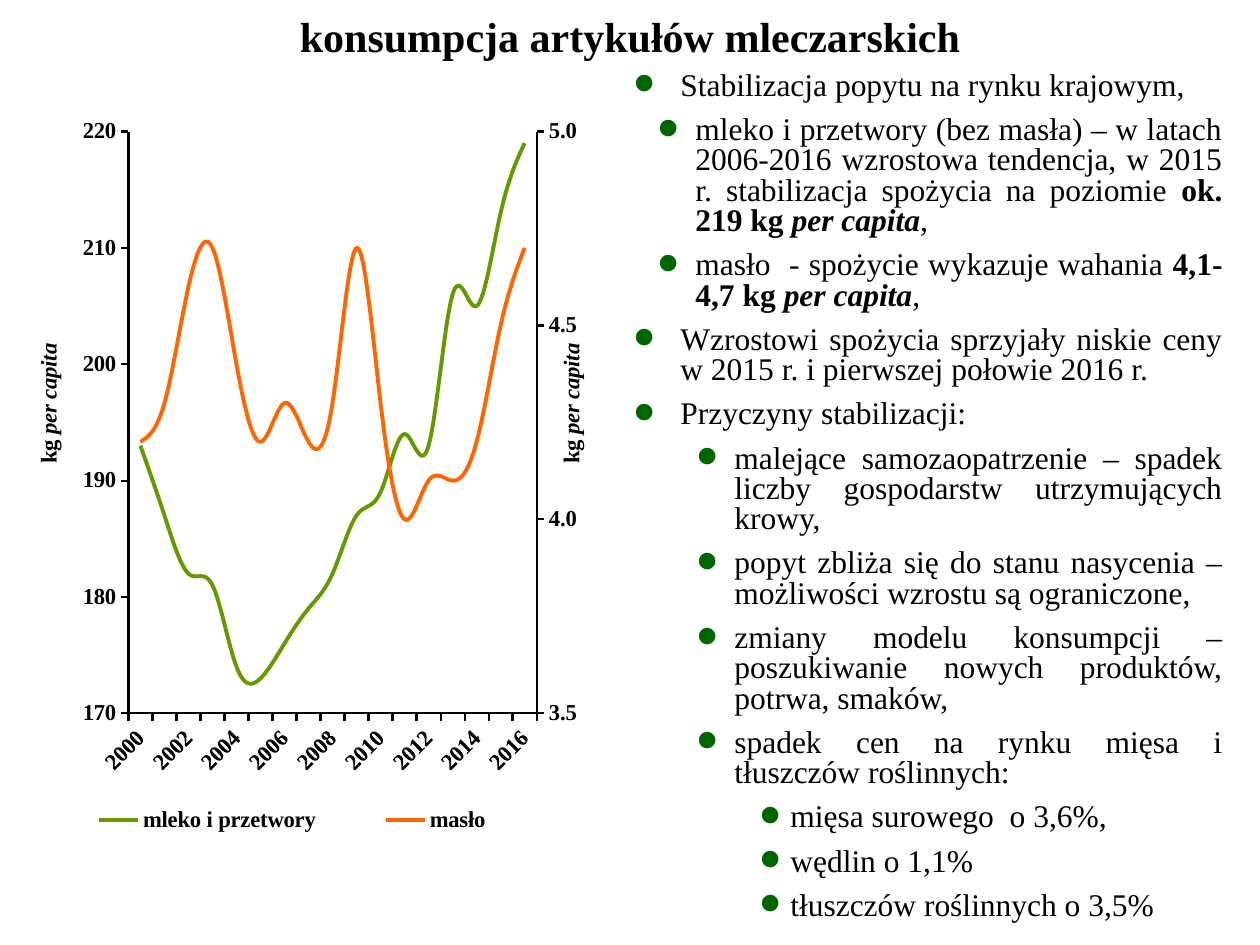
from copy import deepcopy
from dataclasses import dataclass

from lxml import etree
from pptx import Presentation
from pptx.chart.axis import ValueAxis
from pptx.chart.data import CategoryChartData
from pptx.dml.color import RGBColor
from pptx.enum.chart import XL_CHART_TYPE, XL_LEGEND_POSITION, XL_TICK_MARK
from pptx.enum.text import MSO_ANCHOR, PP_ALIGN
from pptx.oxml.ns import qn
from pptx.util import Emu, Pt

PX = 914400 // 126
LINE = XL_CHART_TYPE.LINE
BOTTOM = XL_LEGEND_POSITION.BOTTOM
OUTSIDE, NO_TICK = XL_TICK_MARK.OUTSIDE, XL_TICK_MARK.NONE
MIDDLE = MSO_ANCHOR.MIDDLE
CENTER, JUSTIFY = PP_ALIGN.CENTER, PP_ALIGN.JUSTIFY


@dataclass
class Theme:
    font: str = "Times New Roman"
    text: RGBColor = RGBColor(0, 0, 0)
    bullet: str = "006600"
    milk: RGBColor = RGBColor(0x66, 0x99, 0x00)
    butter: RGBColor = RGBColor(0xFF, 0x66, 0x00)
    title_size: int = 24
    body_size: int = 18
    chart_size: int = 13


# Level, left margin and hanging indent in px
POINT, SUBPOINT = (0, 48, 48), (1, 63, 39)
CAUSE, PRICE = (1, 102, 39), (2, 158, 32)

BODY = [
    (POINT, [("Stabilizacja popytu na rynku krajowym,", "")]),
    (SUBPOINT, [("mleko i przetwory (bez masła) – w latach 2006-2016 wzrostowa "
                 "tendencja, w 2015 r. stabilizacja spożycia na poziomie ", ""),
                ("ok. 219 kg ", "b"), ("per capita", "bi"), (", ", "")]),
    (SUBPOINT, [("masło  - spożycie wykazuje wahania ", ""),
                ("4,1-4,7 kg ", "b"), ("per capita", "bi"), (", ", "")]),
    (POINT, [("Wzrostowi spożycia sprzyjały niskie ceny w 2015 r. "
              "i pierwszej połowie 2016 r. ", "")]),
    (POINT, [("Przyczyny stabilizacji:", "")]),
    (CAUSE, [("malejące samozaopatrzenie – spadek liczby gospodarstw "
              "utrzymujących krowy,", "")]),
    (CAUSE, [("popyt zbliża się do stanu nasycenia – możliwości wzrostu "
              "są ograniczone,", "")]),
    (CAUSE, [("zmiany modelu konsumpcji – poszukiwanie nowych produktów, "
              "potrwa, smaków,", "")]),
    (CAUSE, [("spadek cen na rynku mięsa i tłuszczów roślinnych:", "")]),
    (PRICE, [("mięsa surowego  o 3,6%,", "")]),
    (PRICE, [("wędlin o 1,1%", "")]),
    (PRICE, [("tłuszczów roślinnych o 3,5%", "")]),
]

YEARS = [str(year) for year in range(2000, 2017)]
MILK = [193, 187, 182, 181, 174, 173, 176, 179, 182, 187, 189, 194, 193, 206, 205, 213, 219]
BUTTER = [4.2, 4.3, 4.6, 4.7, 4.4, 4.2, 4.3, 4.2, 4.3, 4.7, 4.3, 4, 4.1, 4.1, 4.2, 4.5, 4.7]


def child(parent, tag, index=None, **attrs):
    """Add a child element, at the end unless an index is given."""
    el = etree.Element(qn(tag), attrs)
    parent.insert(len(parent) if index is None else index, el)
    return el


def set_layout(parent, index, inner=False, **fractions):
    """Place a chart part by fractions of the chart area."""
    for old in parent.findall(qn("c:layout")):
        parent.remove(old)
    manual = child(child(parent, "c:layout", index), "c:manualLayout")
    if inner:
        child(manual, "c:layoutTarget", val="inner")
    for name in ("xMode", "yMode"):
        child(manual, f"c:{name}", val="edge")
    for name, value in fractions.items():
        child(manual, f"c:{name}", val=str(value))


class SlideBuilder:
    def __init__(self, s, theme):
        self.s, self.theme = s, theme

    def style(self, font, size, bold=False, italic=False):
        font.name, font.size = self.theme.font, Pt(size)
        font.bold, font.italic = bold, italic
        font.color.rgb = self.theme.text

    def runs(self, p, parts, size):
        for text, marks in parts:
            r = p.add_run()
            r.text = text
            self.style(r.font, size, "b" in marks, "i" in marks)

    def box(self, *px):
        tf = self.s.shapes.add_textbox(*(Emu(v * PX) for v in px)).text_frame
        tf.word_wrap = True
        return tf

    def title(self, text, *px):
        tf = self.box(*px)
        tf.vertical_anchor = MIDDLE
        p = tf.paragraphs[0]
        p.alignment = CENTER
        self.runs(p, [(text, "b")], self.theme.title_size)

    def bullets(self, items, *px):
        tf = self.box(*px)
        for i, ((level, margin, hang), parts) in enumerate(items):
            p = tf.add_paragraph() if i else tf.paragraphs[0]
            p.alignment, p.level = JUSTIFY, level
            p.line_spacing, p.space_after = 0.8, Pt(6)
            if i:
                p.space_before = Pt(2)
            pPr = p._p.get_or_add_pPr()
            pPr.set("marL", str(margin * PX))
            pPr.set("indent", str(-hang * PX))
            child(child(pPr, "a:buClr"), "a:srgbClr", val=self.theme.bullet)
            child(pPr, "a:buSzPct", val="220000")
            child(pPr, "a:buFont", typeface=self.theme.font)
            child(pPr, "a:buChar", char="•")
            self.runs(p, parts, self.theme.body_size)

    def axis_line(self, axis):
        axis.format.line.color.rgb = self.theme.text
        axis.format.line.width = Pt(1.25)
        axis.major_tick_mark, axis.minor_tick_mark = OUTSIDE, NO_TICK

    def value_axis(self, axis, low, high, step, number_format, title_x):
        self.axis_line(axis)
        axis.has_major_gridlines = False
        axis.minimum_scale, axis.maximum_scale, axis.major_unit = low, high, step
        axis.tick_labels.number_format = number_format
        axis.tick_labels.number_format_is_linked = False
        self.style(axis.tick_labels.font, self.theme.chart_size, True)
        p = axis.axis_title.text_frame.paragraphs[0]
        self.runs(p, [("kg ", "b"), ("per capita", "bi")], self.theme.chart_size)
        title = axis.axis_title._element
        title.find(".//" + qn("a:bodyPr")).set("rot", "-5400000")
        set_layout(title, 1, x=title_x, y=0.3)

    def second_axis(self, chart):
        """Move the last series to its own right-hand axis."""
        plot = chart._chartSpace.chart.plotArea
        left = plot.find(qn("c:lineChart"))
        right = deepcopy(left)
        left.remove(left.findall(qn("c:ser"))[1])
        right.remove(right.find(qn("c:ser")))
        left.addnext(right)
        cat, val = (deepcopy(plot.find(qn(t))) for t in ("c:catAx", "c:valAx"))
        ids = {cat.find(qn("c:axId")).get("val"): "5001",
               val.find(qn("c:axId")).get("val"): "5002"}
        for part in (right, cat, val):
            for tag in ("c:axId", "c:crossAx"):
                for el in part.findall(qn(tag)):
                    el.set("val", ids[el.get("val")])
        cat.find(qn("c:delete")).set("val", "1")
        val.find(qn("c:axPos")).set("val", "r")
        val.find(qn("c:crosses")).set("val", "max")
        plot.find(qn("c:valAx")).addnext(val)
        val.addnext(cat)
        return ValueAxis(val)

    def consumption_chart(self, *px):
        data = CategoryChartData()
        data.categories = YEARS
        data.add_series("mleko i przetwory", MILK)
        data.add_series("masło", BUTTER)
        chart = self.s.shapes.add_chart(LINE, *(Emu(v * PX) for v in px), data).chart
        chart.has_title = False
        self.style(chart.font, self.theme.chart_size, True)
        # chart.value_axis means the last axis once there are two
        left_axis = chart.value_axis
        right_axis = self.second_axis(chart)
        set_layout(chart._chartSpace.chart.plotArea, 0, True, x=0.184, y=0.021, w=0.726, h=0.781)
        # Lines
        for plot, color in zip(chart.plots, (self.theme.milk, self.theme.butter)):
            plot.vary_by_categories = False
            series = plot.series[0]
            series.smooth = True
            series.format.line.color.rgb = color
            series.format.line.width = Pt(2.25)
        # Axes
        axis = chart.category_axis
        self.axis_line(axis)
        self.style(axis.tick_labels.font, self.theme.chart_size, True)
        cat = axis._element
        cat.find(qn("c:txPr")).find(qn("a:bodyPr")).set("rot", "-2700000")
        skip = etree.Element(qn("c:tickLblSkip"), val="2")
        cat.find(qn("c:noMultiLvlLbl")).addprevious(skip)
        skip.addnext(etree.Element(qn("c:tickMarkSkip"), val="1"))
        self.value_axis(left_axis, 170, 220, 10, "General", 0.01)
        self.value_axis(right_axis, 3.5, 5, 0.5, "#,##0.0", 0.94)
        # Legend
        chart.has_legend = True
        chart.legend.position = BOTTOM
        chart.legend.include_in_layout = False
        self.style(chart.legend.font, self.theme.chart_size, True)
        set_layout(chart.legend._element, 1, x=0.02, y=0.92, w=0.91, h=0.05)


def main():
    prs = Presentation()
    prs.slide_width, prs.slide_height = Emu(1260 * PX), Emu(945 * PX)
    s = prs.slides.add_slide(prs.slide_layouts[6])
    slide = SlideBuilder(s, Theme())
    slide.title("konsumpcja artykułów mleczarskich", 63, 16, 1134, 39)
    slide.consumption_chart(25, 116, 566, 745)
    slide.bullets(BODY, 620, 66, 615, 863)
    prs.save("out.pptx")


if __name__ == "__main__":
    main()
